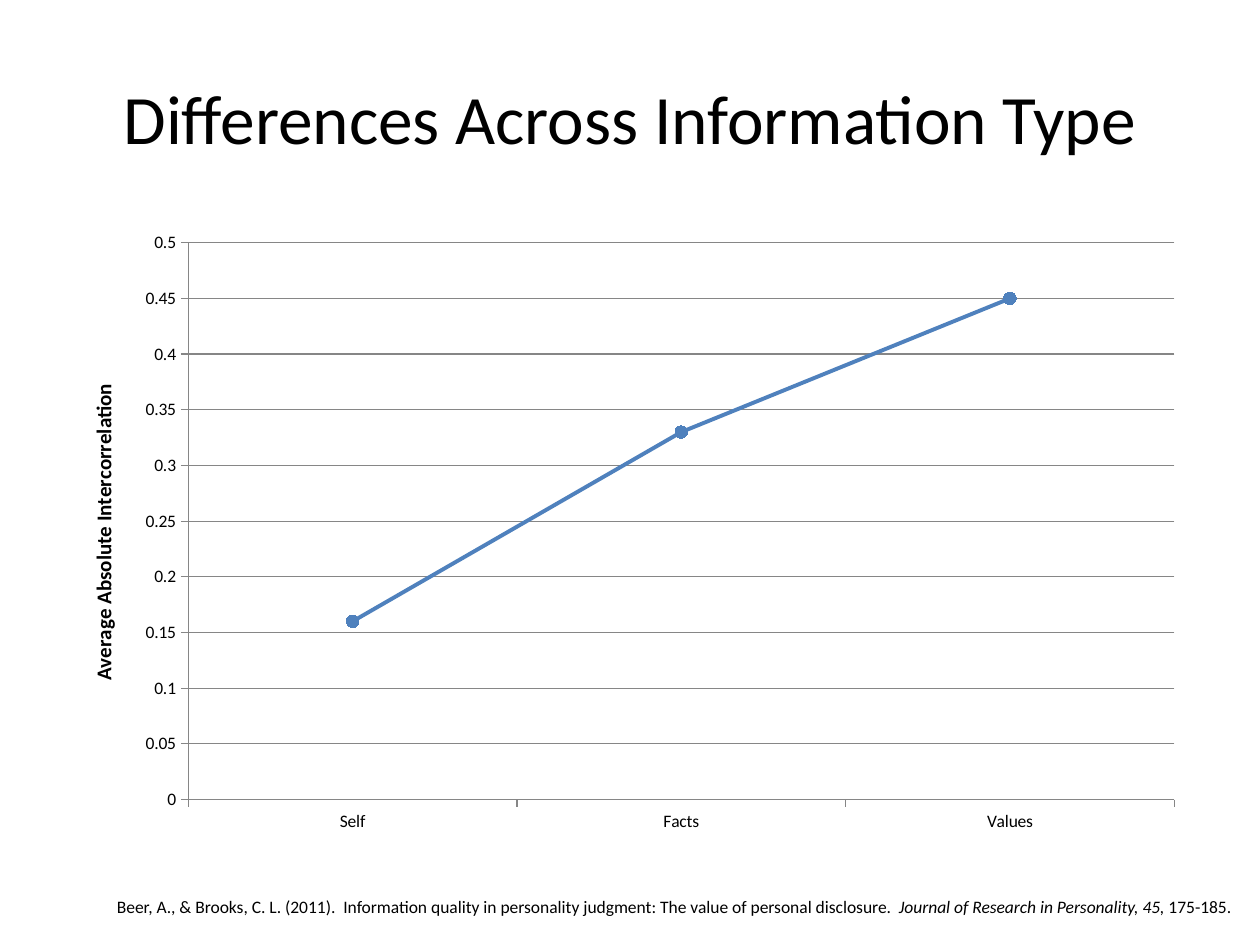
from dataclasses import dataclass

from pptx import Presentation
from pptx.chart.data import CategoryChartData
from pptx.dml.color import RGBColor
from pptx.enum.chart import XL_CHART_TYPE, XL_MARKER_STYLE, XL_TICK_MARK
from pptx.enum.text import MSO_ANCHOR, MSO_AUTO_SIZE, PP_ALIGN
from pptx.util import Pt


@dataclass(frozen=True)
class Theme:
    font: str = "Calibri"
    text: RGBColor = RGBColor(0x00, 0x00, 0x00)
    series: RGBColor = RGBColor(0x4F, 0x81, 0xBD)
    axis: RGBColor = RGBColor(0x86, 0x86, 0x86)
    title_size: float = 39.6
    axis_title_size: float = 12
    small_size: float = 10


class SlideBuilder:
    def __init__(self, prs, theme):
        self.theme = theme
        self.slide = prs.slides.add_slide(prs.slide_layouts[5])

    def style(self, font, size, **extra):
        values = {"name": self.theme.font, "size": Pt(size), **extra}
        for name, value in values.items():
            setattr(font, name, value)
        font.color.rgb = self.theme.text

    def rule(self, line, color, width):
        line.color.rgb = color
        line.width = Pt(width)

    def title(self, text, box):
        sp = self.slide.shapes.title
        sp.left, sp.top, sp.width, sp.height = map(Pt, box)
        tf = sp.text_frame
        tf.vertical_anchor = MSO_ANCHOR.MIDDLE
        p = tf.paragraphs[0]
        p.alignment = PP_ALIGN.CENTER
        r = p.add_run()
        r.text = text
        self.style(r.font, self.theme.title_size)

    def line_chart(self, cats, name, values, axis_title, box):
        data = CategoryChartData()
        data.categories = cats
        data.add_series(name, values)
        chart = self.slide.shapes.add_chart(
            XL_CHART_TYPE.LINE_MARKERS, *map(Pt, box), data).chart
        chart.has_legend = chart.has_title = False
        self.style(chart.font, self.theme.small_size)

        # Axes and gridlines
        val = chart.value_axis
        limits = {"minimum_scale": 0, "maximum_scale": 0.5, "major_unit": 0.05,
                  "has_major_gridlines": True}
        for key, value in limits.items():
            setattr(val, key, value)
        val.tick_labels.number_format = "General"
        val.tick_labels.number_format_is_linked = False
        for axis in (chart.category_axis, val):
            axis.major_tick_mark = XL_TICK_MARK.OUTSIDE
            self.rule(axis.format.line, self.theme.axis, 0.75)
        self.rule(val.major_gridlines.format.line, self.theme.axis, 0.75)
        r = val.axis_title.text_frame.paragraphs[0].add_run()
        r.text = axis_title
        self.style(r.font, self.theme.axis_title_size, bold=True)

        # Series line and markers
        chart.plots[0].vary_by_categories = False
        series = chart.plots[0].series[0]
        series.smooth = False
        self.rule(series.format.line, self.theme.series, 2.25)
        marker = series.marker
        marker.style, marker.size = XL_MARKER_STYLE.CIRCLE, 7
        marker.format.fill.solid()
        marker.format.fill.fore_color.rgb = self.theme.series
        marker.format.line.fill.background()

    def citation(self, runs, box):
        tf = self.slide.shapes.add_textbox(*map(Pt, box)).text_frame
        tf.word_wrap = False
        tf.auto_size = MSO_AUTO_SIZE.SHAPE_TO_FIT_TEXT
        p = tf.paragraphs[0]
        for text, italic in runs:
            r = p.add_run()
            r.text = text
            self.style(r.font, self.theme.small_size, italic=italic)


def main():
    prs = Presentation()
    prs.slide_width, prs.slide_height = Pt(720), Pt(540)
    s = SlideBuilder(prs, Theme())

    # Heading
    s.title("Differences Across Information Type", (36, 21.6, 648, 90))

    # Intercorrelation by information type
    s.line_chart(("Self", "Facts", "Values"), "Series 1", (0.16, 0.33, 0.45),
                 "Average Absolute Intercorrelation", (36, 126, 648, 356.4))

    # Source
    s.citation([
        ("Beer, A., & Brooks, C. L. (2011).  Information quality in personality "
         "judgment: The value of personal disclosure.  ", False),
        ("Journal of Research in Personality, 45, ", True),
        ("175-185.", False),
    ], (59.76, 508.3, 659.5, 19.4))

    prs.save("out.pptx")


if __name__ == "__main__":
    main()
